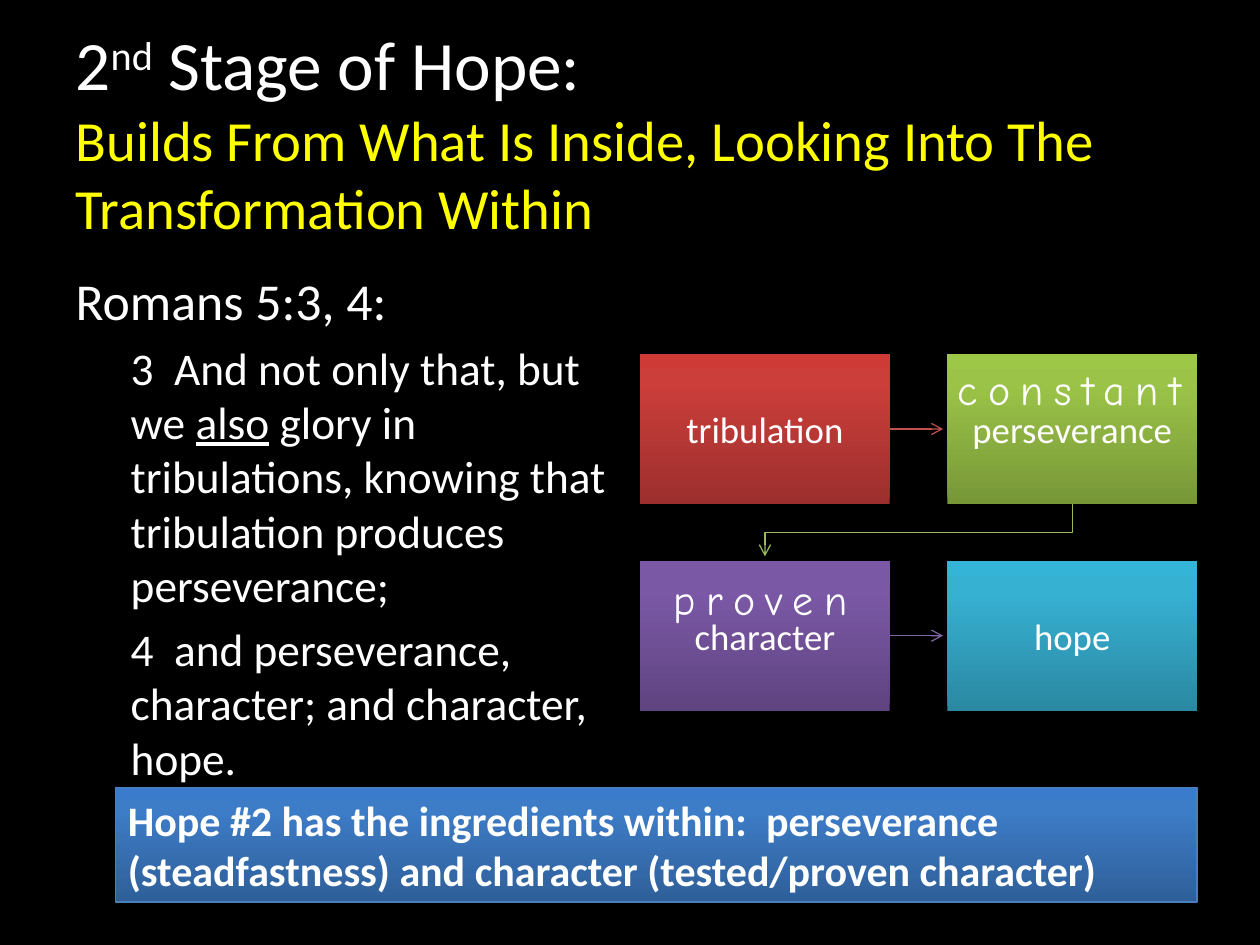
"""Build the "2nd Stage of Hope" slide with its four-step flow."""
from copy import deepcopy

from lxml import etree
from pptx import Presentation
from pptx.dml.color import RGBColor
from pptx.enum.shapes import MSO_CONNECTOR, MSO_SHAPE
from pptx.enum.text import MSO_ANCHOR, MSO_AUTO_SIZE, PP_ALIGN
from pptx.oxml.ns import qn
from pptx.util import Pt

RECTANGLE = MSO_SHAPE.RECTANGLE
STRAIGHT = MSO_CONNECTOR.STRAIGHT
MIDDLE = MSO_ANCHOR.MIDDLE
NO_AUTOFIT = MSO_AUTO_SIZE.NONE
LEFT, CENTER = PP_ALIGN.LEFT, PP_ALIGN.CENTER

BLACK = RGBColor(0x00, 0x00, 0x00)
WHITE = RGBColor(0xFF, 0xFF, 0xFF)
YELLOW = RGBColor(0xFF, 0xFF, 0x00)
RED_LINE = RGBColor(0xC0, 0x50, 0x4D)
GREEN_LINE = RGBColor(0x9B, 0xBB, 0x59)
PURPLE_LINE = RGBColor(0x80, 0x64, 0xA2)
BLUE_LINE = RGBColor(0x4B, 0x7E, 0xBC)
RED = RGBColor(0x9C, 0x2F, 0x2D), RGBColor(0xCB, 0x3E, 0x3A), RGBColor(0xCE, 0x3B, 0x37)
GREEN = RGBColor(0x77, 0x97, 0x37), RGBColor(0x9B, 0xC3, 0x48), RGBColor(0x9D, 0xC7, 0x46)
PURPLE = RGBColor(0x5F, 0x44, 0x80), RGBColor(0x7B, 0x58, 0xA6), RGBColor(0x7C, 0x57, 0xA8)
AQUA = RGBColor(0x2A, 0x88, 0xA2), RGBColor(0x37, 0xB1, 0xD2), RGBColor(0x34, 0xB4, 0xD6)
BLUE = RGBColor(0x2F, 0x5F, 0x99), RGBColor(0x3D, 0x7C, 0xC7), RGBColor(0x3A, 0x7C, 0xCB)

BOX_WIDTH, BOX_HEIGHT = 142.6, 85.7
COLUMNS = 365.8, 541.4
ROWS = 202.3, 320.4
ARROW_GAP = 2.5


def add_gradient_box(left, top, width, height, colors, text, size):
    shape = slide.shapes.add_shape(RECTANGLE, Pt(left), Pt(top), Pt(width), Pt(height))
    shape.shadow.inherit = False
    shape.line.fill.background()
    shape.fill.gradient()
    shape.fill.gradient_angle = 90
    stop_list = shape._element.spPr.find(".//" + qn("a:gsLst"))
    stop_list.append(deepcopy(stop_list[-1]))
    for stop, position, color in zip(shape.fill.gradient_stops, (0, 0.8, 1), colors):
        stop.position = position
        stop.color.rgb = color
    shape.text_frame.word_wrap = True
    shape.text_frame.vertical_anchor = MIDDLE
    paragraph = shape.text_frame.paragraphs[0]
    paragraph.text = text
    paragraph.alignment = CENTER
    paragraph.font.name = "Calibri"
    paragraph.font.size = Pt(size)
    paragraph.font.color.rgb = WHITE
    return shape


def finish_arrow(arrow, color):
    arrow.line.color.rgb = color
    arrow.line.width = Pt(0.75)
    etree.SubElement(arrow.line._get_or_add_ln(), qn("a:tailEnd"), type="arrow")
    if arrow._element.spPr.find(qn("a:effectLst")) is None:
        etree.SubElement(arrow._element.spPr, qn("a:effectLst"))


presentation = Presentation()
presentation.slide_width, presentation.slide_height = Pt(720), Pt(540)
slide = presentation.slides.add_slide(presentation.slide_layouts[1])
slide.background.fill.solid()
slide.background.fill.fore_color.rgb = BLACK

title = slide.shapes.title
title.left, title.top, title.width, title.height = Pt(36), Pt(30), Pt(648), Pt(90)
title.text_frame.auto_size = NO_AUTOFIT
title.text_frame.vertical_anchor = MIDDLE
paragraph = title.text_frame.paragraphs[0]
paragraph.alignment = LEFT
paragraph.font.name = "Calibri"
for text, size, color in (
    ("2", 39.6, WHITE),
    ("nd", 39.6, WHITE),
    (" Stage of Hope: ", 39.6, WHITE),
    ("Builds From What Is Inside, Looking Into The Transformation Within", 32.4, YELLOW),
):
    if color == YELLOW:
        paragraph.add_line_break()
    run = paragraph.add_run()
    run.text = text
    run.font.size = Pt(size)
    run.font.color.rgb = color
    if text == "nd":
        run.font._element.set("baseline", "30000")

body = slide.placeholders[1]
body.left, body.top, body.width, body.height = Pt(36), Pt(149.8), Pt(318.2), Pt(282.2)
body.text_frame.auto_size = NO_AUTOFIT
verses = (
    (0, 29.6, ("Romans 5:3, 4:",)),
    (1, 25.9, ("3  And not only that, but we ", "also",
               " glory in tribulations, knowing that tribulation produces perseverance;")),
    (1, 25.9, ("4  and perseverance, character; and character, hope.",)),
)
for index, (level, size, parts) in enumerate(verses):
    paragraph = body.text_frame.add_paragraph() if index else body.text_frame.paragraphs[0]
    paragraph.level = level
    paragraph.font.name = "Calibri"
    paragraph.font.size = Pt(size)
    paragraph.font.color.rgb = WHITE
    properties = paragraph._p.get_or_add_pPr()
    properties.set("marL", str(Pt(31.5 * level)))
    properties.set("indent", "0")
    properties.insert(0, etree.Element(qn("a:buNone")))
    for text in parts:
        run = paragraph.add_run()
        run.text = text
        if text == "also":
            run.font.underline = True

steps = (("tribulation", RED), ("perseverance", GREEN), ("character", PURPLE), ("hope", AQUA))
boxes = []
for index, (text, colors) in enumerate(steps):
    row, column = divmod(index, 2)
    boxes.append(add_gradient_box(COLUMNS[column], ROWS[row], BOX_WIDTH, BOX_HEIGHT,
                                  colors, text, 21))

for row, (top, color) in enumerate(zip(ROWS, (RED_LINE, PURPLE_LINE))):
    middle = Pt(top + BOX_HEIGHT / 2)
    arrow = slide.shapes.add_connector(STRAIGHT, Pt(COLUMNS[0] + BOX_WIDTH), middle,
                                       Pt(COLUMNS[1] - ARROW_GAP), middle)
    arrow.begin_connect(boxes[2 * row], 3)
    finish_arrow(arrow, color)

start_x, end_x = COLUMNS[1] + BOX_WIDTH / 2, COLUMNS[0] + BOX_WIDTH / 2
start_y, end_y = ROWS[0] + BOX_HEIGHT, ROWS[1] - ARROW_GAP
turn_y = (start_y + ROWS[1]) / 2
builder = slide.shapes.build_freeform(Pt(start_x), Pt(start_y))
builder.add_line_segments(
    [(Pt(start_x), Pt(turn_y)), (Pt(end_x), Pt(turn_y)), (Pt(end_x), Pt(end_y))], close=False)
return_arrow = builder.convert_to_shape()
return_arrow.shadow.inherit = False
return_arrow.fill.background()
finish_arrow(return_arrow, GREEN_LINE)

summary = add_gradient_box(
    66, 450, 618, 65.5, BLUE,
    "Hope #2 has the ingredients within:  perseverance (steadfastness) "
    "and character (tested/proven character)", 24)
summary.line.color.rgb = BLUE_LINE
summary.line.width = Pt(0.75)
summary.text_frame.paragraphs[0].alignment = LEFT
summary.text_frame.paragraphs[0].font.bold = True

for text, left, top, width in (("proven", 378, 324, 116), ("constant", 540, 204, 152.6)):
    label = slide.shapes.add_textbox(Pt(left), Pt(top), Pt(width), Pt(36))
    label.text_frame.word_wrap = False
    run = label.text_frame.paragraphs[0].add_run()
    run.text = text
    run.font.name = "Comic Neue"
    run.font.size = Pt(24)
    run.font.color.rgb = WHITE
    run.font._element.set("spc", "600")

presentation.save("out.pptx")
